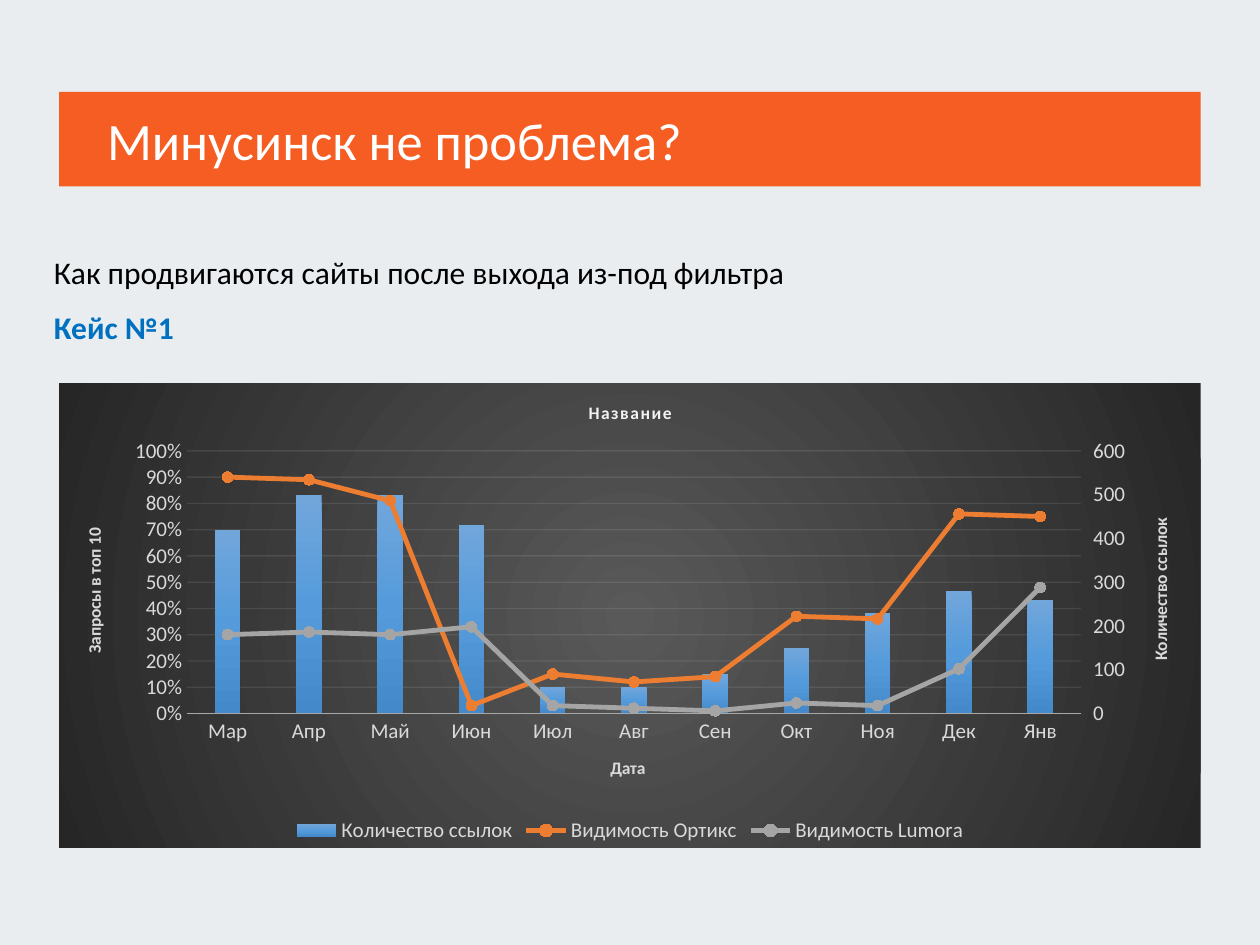
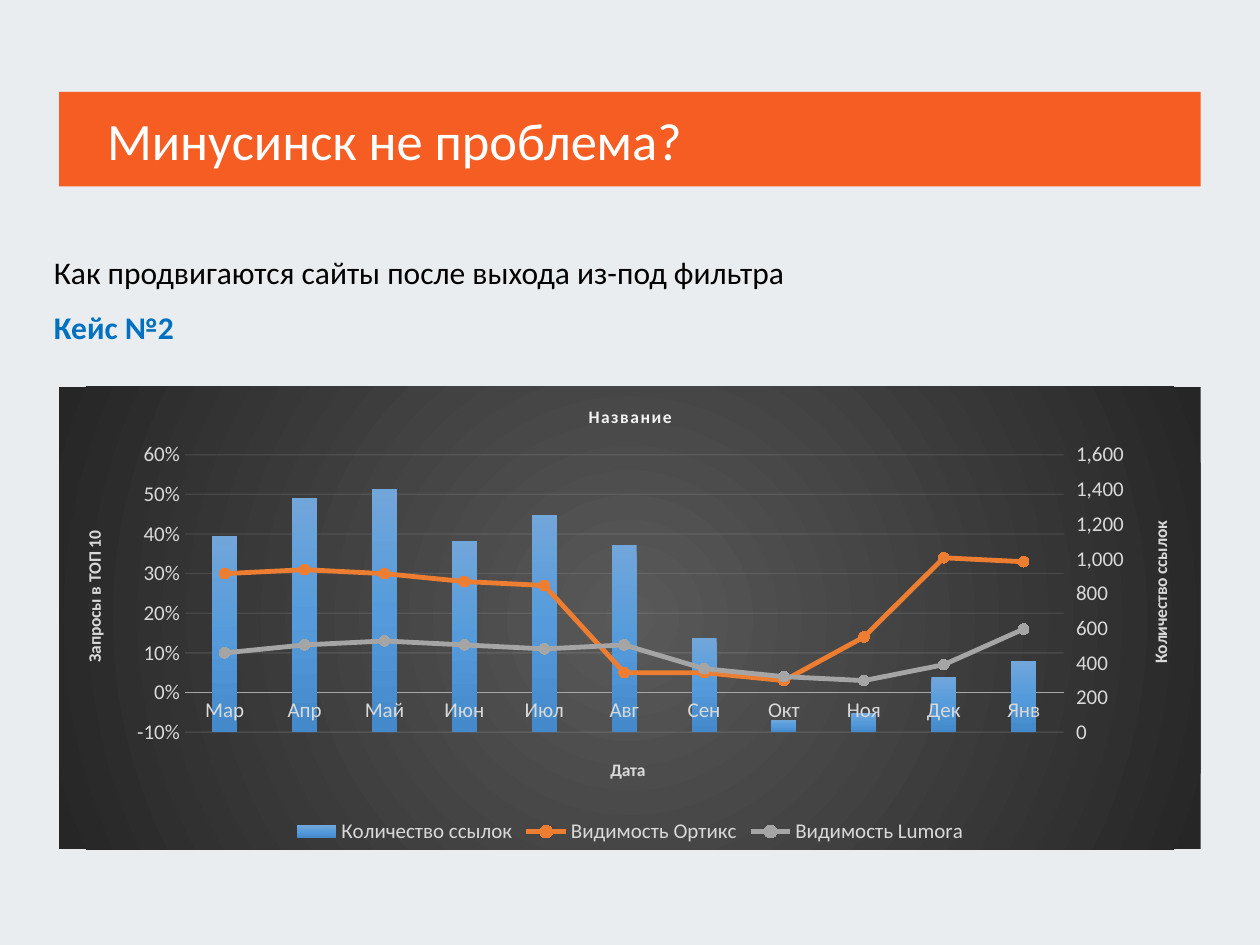
from copy import deepcopy

from pptx import Presentation
from pptx.chart.axis import CategoryAxis, ValueAxis
from pptx.chart.data import CategoryChartData
from pptx.dml.color import RGBColor
from pptx.enum.chart import XL_CHART_TYPE, XL_LEGEND_POSITION, XL_MARKER_STYLE, XL_TICK_MARK
from pptx.enum.shapes import MSO_SHAPE
from pptx.enum.text import MSO_ANCHOR, MSO_AUTO_SIZE, PP_ALIGN
from pptx.oxml import parse_xml
from pptx.oxml.ns import nsdecls, qn
from pptx.util import Inches, Pt

FONT = "Calibri"
BACKGROUND, BAND, WHITE, BLACK, CASE_BLUE = "E9EDF0", "F55D22", "FFFFFF", "000000", "0070C0"
CHART_TEXT, CHART_TITLE, AXIS_LINE = "D9D9D9", "F2F2F2", "A6A6A6"
AREA_STOPS = [(0, "595959"), (100, "262626")]
BAR_STOPS = [(0, "71A6DB"), (50, "559BDB"), (100, "448ACA")]
LINE_COLORS = [("ED7D31", "F67B28"), ("A5A5A5", "A5A5A5")]
RADIAL = ('<a:path path="circle"><a:fillToRect l="50000" t="50000" r="50000" b="50000"/>'
          '</a:path>')
DOWNWARD = '<a:lin ang="5400000" scaled="0"/>'

MONTHS = ["Мар", "Апр", "Май", "Июн", "Июл", "Авг", "Сен", "Окт", "Ноя", "Дек", "Янв"]
LINKS = "Количество ссылок"
VISIBILITY = ["Видимость Ортикс", "Видимость Lumora"]

CASES = [
    dict(
        heading="Кейс №1", text_width=6.11, top=3.04, height=3.69,
        plot=(0.112, 0.146, 0.783, 0.565), share_title="Запросы в топ 10",
        share_range=(0, 1), link_range=(0, 600, 100),
        links=[420, 500, 500, 430, 60, 60, 90, 150, 230, 280, 260],
        shares=[[0.9, 0.89, 0.81, 0.03, 0.15, 0.12, 0.14, 0.37, 0.36, 0.76, 0.75],
                [0.3, 0.31, 0.3, 0.33, 0.03, 0.02, 0.01, 0.04, 0.03, 0.17, 0.48]],
    ),
    dict(
        heading="Кейс №2", text_width=6.62, top=3.07, height=3.67,
        plot=(0.11, 0.147, 0.77, 0.6), share_title="Запросы в ТОП 10",
        share_range=(-0.1, 0.6), link_range=(0, 1600, 200),
        links=[1130, 1350, 1400, 1100, 1250, 1080, 540, 70, 110, 320, 410],
        shares=[[0.3, 0.31, 0.3, 0.28, 0.27, 0.05, 0.05, 0.03, 0.14, 0.34, 0.33],
                [0.1, 0.12, 0.13, 0.12, 0.11, 0.12, 0.06, 0.04, 0.03, 0.07, 0.16]],
    ),
]


def color(hex_string):
    return RGBColor.from_string(hex_string)


def style_font(font, size, hex_string, bold=False):
    font.name, font.size, font.bold = FONT, Pt(size), bold
    font.color.rgb = color(hex_string)


def write(paragraph, text, size=18, hex_string=BLACK, bold=False, before=0, spacing=None):
    """Add a formatted run; spacing is the letter spacing in points."""
    paragraph.space_before = Pt(before)
    run = paragraph.add_run()
    run.text = text
    style_font(run.font, size, hex_string, bold)
    if spacing:
        run.font._element.set("spc", str(spacing * 100))


def gradient(stops, direction):
    """Return chart shape properties with a gradient fill and no outline."""
    stop_xml = "".join(f'<a:gs pos="{position * 1000}"><a:srgbClr val="{value}"/></a:gs>'
                       for position, value in stops)
    return parse_xml(f'<c:spPr {nsdecls("c", "a")}><a:gradFill rotWithShape="1">'
                     f'<a:gsLst>{stop_xml}</a:gsLst>{direction}</a:gradFill>'
                     '<a:ln><a:noFill/></a:ln></c:spPr>')


def layout(x, y, width=None, height=None):
    """Return a manual layout in fractions of the chart area."""
    target = '<c:layoutTarget val="inner"/>' if width else ""
    size = f'<c:w val="{width}"/><c:h val="{height}"/>' if width else ""
    return parse_xml(f'<c:layout {nsdecls("c")}><c:manualLayout>{target}'
                     f'<c:xMode val="edge"/><c:yMode val="edge"/>'
                     f'<c:x val="{x}"/><c:y val="{y}"/>{size}</c:manualLayout></c:layout>')


def replace_layout(parent, new_layout, after=None):
    for old_layout in parent.findall(qn("c:layout")):
        parent.remove(old_layout)
    if after is None:
        parent.insert(0, new_layout)
    else:
        after.addnext(new_layout)


def set_title(owner, title, text, x, y, rotated=False, **text_format):
    """Fill and place the title of a chart or axis element."""
    frame = title.text_frame
    write(frame.paragraphs[0], text, size=10, bold=True, **text_format)
    if rotated:
        body = frame._txBody.find(qn("a:bodyPr"))
        body.set("rot", "-5400000")
        body.set("vert", "horz")
    element = owner.find(qn("c:title"))
    replace_layout(element, layout(x, y), after=element.find(qn("c:tx")))


def set_axis_ids(element, own_id, crossing_id):
    element.find(qn("c:axId")).set("val", str(own_id))
    element.find(qn("c:crossAx")).set("val", str(crossing_id))


def scale(axis, minimum, maximum, unit):
    axis.minimum_scale, axis.maximum_scale, axis.major_unit = minimum, maximum, unit


def set_number_format(axis, number_format):
    axis.tick_labels.number_format = number_format
    axis.tick_labels.number_format_is_linked = False


def move_links_to_columns(chart):
    """Turn the first line series into columns that have their own axes on the right."""
    plot_area = chart._chartSpace.chart.plotArea
    line_chart = plot_area.find(qn("c:lineChart"))
    series = line_chart.find(qn("c:ser"))
    for tag in ("c:marker", "c:smooth", "c:spPr"):
        for child in series.findall(qn(tag)):
            series.remove(child)
    bar_chart = parse_xml(
        f'<c:barChart {nsdecls("c")}><c:barDir val="col"/><c:grouping val="clustered"/>'
        '<c:varyColors val="0"/><c:gapWidth val="219"/><c:overlap val="-27"/>'
        '<c:axId val="1001"/><c:axId val="1002"/></c:barChart>')
    bar_chart.find(qn("c:varyColors")).addnext(series)
    line_chart.addprevious(bar_chart)
    series_text = series.find(qn("c:tx"))
    series_text.addnext(gradient(BAR_STOPS, DOWNWARD))
    series.find(qn("c:spPr")).addnext(
        parse_xml(f'<c:invertIfNegative {nsdecls("c")} val="0"/>'))

    share_axis = chart.value_axis._element
    link_values, link_categories = deepcopy(share_axis), deepcopy(chart.category_axis._element)
    share_axis.addnext(link_values)
    link_values.addnext(link_categories)
    set_axis_ids(link_categories, 1001, 1002)
    set_axis_ids(link_values, 1002, 1001)
    link_values.find(qn("c:crosses")).set("val", "max")
    link_values.find(qn("c:axPos")).set("val", "r")
    CategoryAxis(link_categories).visible = False
    link_axis = ValueAxis(link_values)
    link_axis.has_major_gridlines = False
    link_axis.major_tick_mark = XL_TICK_MARK.OUTSIDE
    return link_axis


class Deck:
    """Holds the presentation, the shared style and the current slide."""

    def __init__(self):
        self.presentation = Presentation()
        self.presentation.slide_width = Inches(10)
        self.presentation.slide_height = Inches(7.5)
        self.slide = None

    def new_slide(self, title):
        self.slide = self.presentation.slides.add_slide(self.presentation.slide_layouts[6])
        self.rectangle(0, 0, 10, 7.5, BACKGROUND)
        self.title_band(title)

    def rectangle(self, left, top, width, height, fill):
        shape = self.slide.shapes.add_shape(
            MSO_SHAPE.RECTANGLE, Inches(left), Inches(top), Inches(width), Inches(height))
        shape.shadow.inherit = False
        shape.fill.solid()
        shape.fill.fore_color.rgb = color(fill)
        shape.line.fill.background()
        return shape

    def title_band(self, title):
        frame = self.rectangle(0.47, 0.73, 9.06, 0.75, BAND).text_frame
        frame.margin_left = Inches(0.38)
        frame.vertical_anchor = MSO_ANCHOR.MIDDLE
        frame.paragraphs[0].alignment = PP_ALIGN.LEFT
        write(frame.paragraphs[0], title, size=30, hex_string=WHITE)

    def introduction(self, text, heading, width):
        box = self.slide.shapes.add_textbox(
            Inches(0.33), Inches(1.96), Inches(width), Inches(0.84))
        frame = box.text_frame
        frame.word_wrap = True
        frame.auto_size = MSO_AUTO_SIZE.SHAPE_TO_FIT_TEXT
        write(frame.paragraphs[0], text)
        write(frame.add_paragraph(), heading, hex_string=CASE_BLUE, bold=True, before=9.8)

    def visibility_chart(self, case):
        data = CategoryChartData()
        data.categories = MONTHS
        data.add_series(LINKS, case["links"], "#,##0")
        for name, values in zip(VISIBILITY, case["shares"]):
            data.add_series(name, values, "0%")
        chart = self.slide.shapes.add_chart(
            XL_CHART_TYPE.LINE_MARKERS, Inches(0.47), Inches(case["top"]),
            Inches(9.06), Inches(case["height"]), data).chart
        style_font(chart.font, 12, CHART_TEXT)
        chart._chartSpace.chart.addnext(gradient(AREA_STOPS, RADIAL))

        self.style_lines(list(chart.plots[0].series)[1:])
        self.style_axes(chart)
        month_axis, share_axis = chart.category_axis, chart.value_axis
        link_axis = move_links_to_columns(chart)
        scale(share_axis, *case["share_range"], 0.1)
        scale(link_axis, *case["link_range"])
        set_number_format(share_axis, "0%")
        set_number_format(link_axis, "#,##0")

        for axis, text, x, y, rotated in (
                (month_axis, "Дата", 0.48, 0.797, False),
                (share_axis, case["share_title"], 0.018, 0.305, True),
                (link_axis, LINKS, 0.952, 0.284, True)):
            set_title(axis._element, axis.axis_title, text, x, y, rotated,
                      hex_string=CHART_TEXT)
        chart.has_title = True
        set_title(chart._chartSpace.chart, chart.chart_title, "Название", 0.461, 0.034,
                  hex_string=CHART_TITLE, spacing=1)
        chart.has_legend = True
        chart.legend.position = XL_LEGEND_POSITION.BOTTOM
        chart.legend.include_in_layout = False
        style_font(chart.legend.font, 12, CHART_TEXT)
        replace_layout(chart._chartSpace.chart.plotArea, layout(*case["plot"]))

    def style_lines(self, lines):
        for series, (line_color, marker_color) in zip(lines, LINE_COLORS):
            series.smooth = False
            series.format.line.color.rgb = color(line_color)
            series.format.line.width = Pt(2.75)
            marker = series.marker
            marker.style, marker.size = XL_MARKER_STYLE.CIRCLE, 6
            marker.format.fill.solid()
            marker.format.fill.fore_color.rgb = color(marker_color)
            marker.format.line.color.rgb = color(line_color)

    def style_axes(self, chart):
        for axis in (chart.category_axis, chart.value_axis):
            axis.major_tick_mark = axis.minor_tick_mark = XL_TICK_MARK.NONE
            style_font(axis.tick_labels.font, 12, CHART_TEXT)
        chart.category_axis.format.line.color.rgb = color(AXIS_LINE)
        chart.value_axis.format.line.fill.background()
        chart.value_axis.has_major_gridlines = True
        grid_line = chart.value_axis.major_gridlines.format.line
        grid_line.width = Pt(0.75)
        grid_line.color.rgb = color(CHART_TITLE)
        grid_color = next(chart.value_axis._element.find(qn("c:majorGridlines"))
                          .iter(qn("a:srgbClr")))
        grid_color.append(parse_xml(f'<a:alpha {nsdecls("a")} val="10000"/>'))


def main():
    deck = Deck()
    for case in CASES:
        deck.new_slide("Минусинск не проблема?")
        deck.introduction("Как продвигаются сайты после выхода из-под фильтра",
                          case["heading"], case["text_width"])
        deck.visibility_chart(case)
    deck.presentation.save("out.pptx")


if __name__ == "__main__":
    main()
